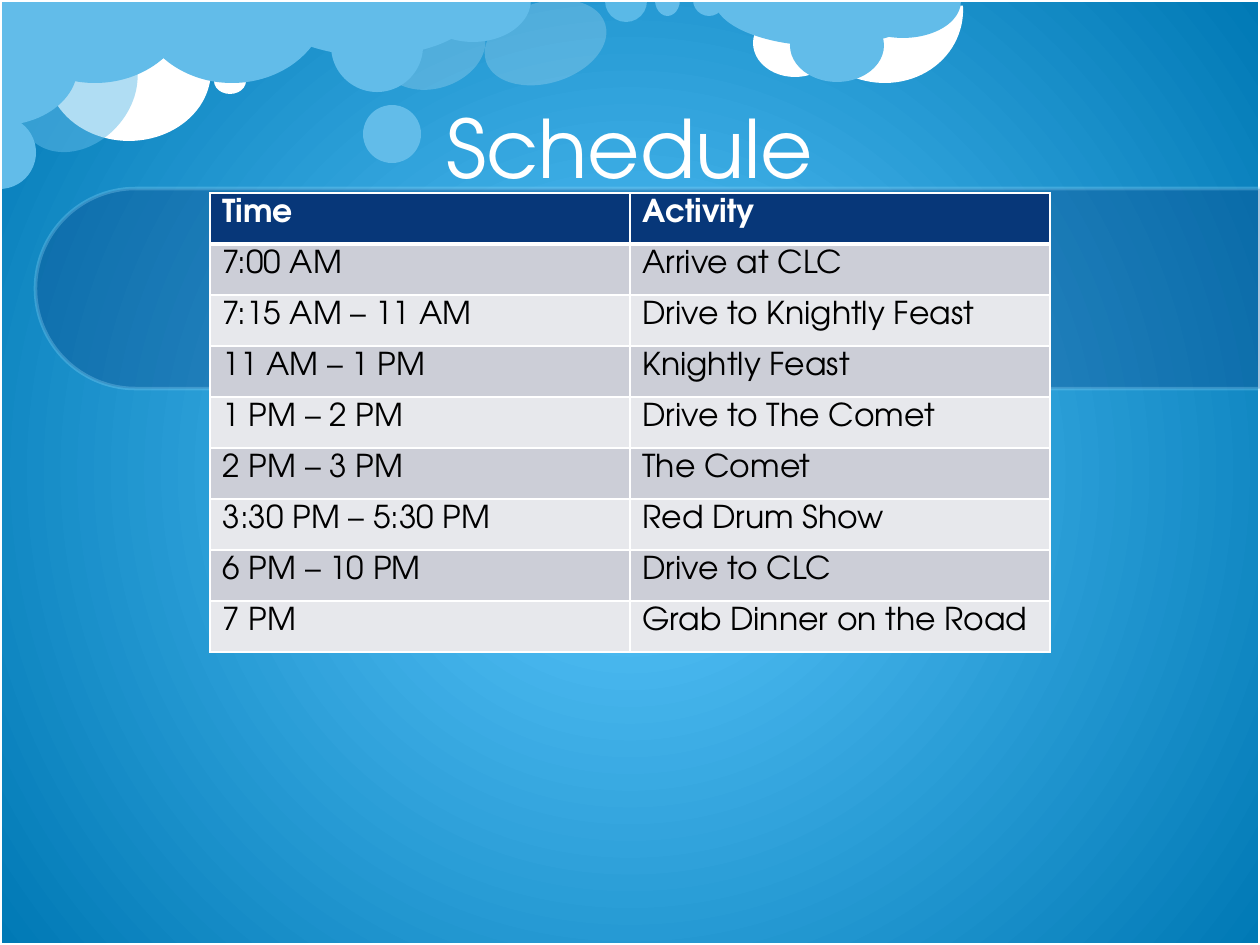
from dataclasses import dataclass
from lxml.etree import SubElement
from pptx import Presentation
from pptx.dml.color import RGBColor as Rgb
from pptx.enum.shapes import MSO_SHAPE as Preset
from pptx.enum.text import MSO_ANCHOR as Anchor, PP_ALIGN as Align
from pptx.oxml import parse_xml
from pptx.oxml.ns import nsdecls, qn
from pptx.util import Emu, Pt

PX = 914400 / 126


@dataclass(frozen=True)
class Theme:
    font: str = "TeX Gyre Adventor"
    title_size: int = 46
    title_leading: int = 56
    table_size: int = 18
    white: str = "FFFFFF"
    black: str = "000000"
    cloud: str = "62BCE9"
    pale: str = "8FD9FB"
    navy: str = "073779"
    sky_center: str = "5DC9FF"
    sky_edge: str = "0079B5"
    rows: tuple = ("CCCED7", "E7E8EC")


THEME = Theme()
ELLIPSE, PIE, ARC = Preset.OVAL, Preset.PIE, Preset.ARC
HALF_ANGLES = {ELLIPSE: (), PIE: (0, 108), ARC: (151.8, 44.48)}

CLOUDS = [
    (ELLIPSE, (392, -6, 81, 108), THEME.white, 72.8, 20),
    (ELLIPSE, (47, 1, 164, 140), THEME.white, 0, 100),
    (ARC, (805, -76, 152, 165), THEME.white, 106.5, 100),
    (ELLIPSE, (753, 9, 84, 68), THEME.white, 0, 100),
    (PIE, (-1, -83, 192, 166), THEME.cloud, 0, 100),
    (PIE, (262, -55, 220, 111), THEME.cloud, 0, 100),
    (ELLIPSE, (363, 105, 58, 58), THEME.cloud, 0, 100),
    (ELLIPSE, (24, 23, 107, 135), THEME.cloud, 41.8, 50),
    (PIE, (-37, 116, 73, 73), THEME.cloud, 270, 100),
    (ELLIPSE, (214, 68, 32, 26), THEME.white, 0, 100),
    (PIE, (136, -83, 192, 166), THEME.cloud, 0, 100),
    (PIE, (714, -48, 220, 94), THEME.cloud, 0, 100),
    (ELLIPSE, (790, 9, 94, 73), THEME.cloud, 0, 100),
    (PIE, (845, -35, 116, 73), THEME.cloud, 0, 100),
    (ELLIPSE, (505, -20, 81, 125), THEME.white, 72.8, 20),
    (PIE, (605, -20, 42, 42), THEME.pale, 0, 50),
    (PIE, (655, -16, 25, 32), THEME.cloud, 0, 100),
    (PIE, (693, -16, 32, 32), THEME.cloud, 0, 100),
    (ELLIPSE, (331, 0, 92, 92), THEME.cloud, 0, 100),
    (PIE, (415, -42, 116, 84), THEME.cloud, 0, 100),
    (PIE, (-59, -11, 117, 156), THEME.cloud, 270, 100),
]

SCHEDULE = [
    ("Time", "Activity"),
    ("7:00 AM", "Arrive at CLC"),
    ("7:15 AM – 11 AM", "Drive to Knightly Feast"),
    ("11 AM – 1 PM", "Knightly Feast"),
    ("1 PM – 2 PM", "Drive to The Comet"),
    ("2 PM – 3 PM", "The Comet"),
    ("3:30 PM – 5:30 PM", "Red Drum Show"),
    ("6 PM – 10 PM", "Drive to CLC"),
    ("7 PM", "Grab Dinner on the Road"),
]


def px(*lengths):
    return [Emu(round(length * PX)) for length in lengths]


def apply_format(target, values):
    for name, value in values.items():
        setattr(target, name, value)


def paint(fill, color, alpha=100):
    fill.solid()
    fill.fore_color.rgb = Rgb.from_string(color)
    if alpha < 100:
        solid = fill._xPr.find(qn("a:solidFill"))
        SubElement(solid[0], qn("a:alpha"), val=str(alpha * 1000))


def write(paragraph, text, size, color, bold=False):
    run = paragraph.add_run()
    run.text = text
    apply_format(run.font, {"name": THEME.font, "size": Pt(size), "bold": bold})
    run.font.color.rgb = Rgb.from_string(color)


def add_sky(slide):
    fill = slide.background.fill
    fill.gradient()
    for stop, color in zip(fill.gradient_stops, (THEME.sky_center, THEME.sky_edge)):
        stop.color.rgb = Rgb.from_string(color)
    center = parse_xml(
        f'<a:path {nsdecls("a")} path="circle">'
        '<a:fillToRect l="50000" t="50000" r="50000" b="50000"/></a:path>'
    )
    linear = next(slide.background._cSld.iter(qn("a:lin")))
    linear.getparent().replace(linear, center)


def add_figure(slide, preset, box, color=None, rotation=0, alpha=100, angles=()):
    figure = slide.shapes.add_shape(preset, *px(*box))
    figure.rotation = rotation
    figure.shadow.inherit = False
    for index, angle in enumerate(angles):
        figure.adjustments[index] = angle
    if color:
        paint(figure.fill, color, alpha)
    else:
        figure.fill.background()
    figure.line.fill.background()
    return figure


def outline(figure, color, width, alpha=100):
    paint(figure.line.fill, color, alpha)
    figure.line.width = Pt(width)


def add_title(slide, text, box):
    frame = slide.shapes.add_textbox(*px(*box)).text_frame
    apply_format(frame, {"word_wrap": True, "vertical_anchor": Anchor.MIDDLE})
    heading = frame.paragraphs[0]
    apply_format(heading, {"alignment": Align.CENTER, "line_spacing": Pt(THEME.title_leading)})
    write(heading, text, THEME.title_size, THEME.white)


def add_borders(cell, bottom):
    properties = cell._tc.get_or_add_tcPr()
    for side, width in {"L": 1, "R": 1, "T": 1, "B": bottom}.items():
        border = SubElement(properties, qn(f"a:ln{side}"), w=str(Pt(width)))
        SubElement(SubElement(border, qn("a:solidFill")), qn("a:srgbClr"), val=THEME.white)


def add_schedule(slide, left, top, column_width, row_height):
    columns = len(SCHEDULE[0])
    box = left, top, columns * column_width, len(SCHEDULE) * row_height
    table = slide.shapes.add_table(len(SCHEDULE), columns, *px(*box)).table
    for row, entries in enumerate(SCHEDULE):
        header = row == 0
        background = THEME.navy if header else THEME.rows[(row - 1) % 2]
        for column, text in enumerate(entries):
            cell = table.cell(row, column)
            add_borders(cell, 3 if header else 1)
            paint(cell.fill, background)
            color = THEME.white if header else THEME.black
            write(cell.text_frame.paragraphs[0], text, THEME.table_size, color, header)


def main():
    deck = Presentation()
    deck.slide_width, deck.slide_height = px(1260, 945)
    slide = deck.slides.add_slide(deck.slide_layouts[6])
    add_sky(slide)
    for preset, box, color, rotation, alpha in CLOUDS:
        add_figure(slide, preset, box, color, rotation, alpha, HALF_ANGLES[preset])
    frame = add_figure(slide, Preset.RECTANGLE, (0, 0, 1260, 945))
    outline(frame, THEME.white, 2)
    band = add_figure(slide, Preset.ROUND_2_SAME_RECTANGLE, (548, -324, 200, 1225),
                      THEME.navy, 270, 30, (0.5, 0))
    outline(band, THEME.pale, 2, 30)
    add_title(slide, "Schedule", (98, 25, 1063, 242))
    add_schedule(slide, 210, 193, 420, 51)
    deck.save("out.pptx")


if __name__ == "__main__":
    main()
